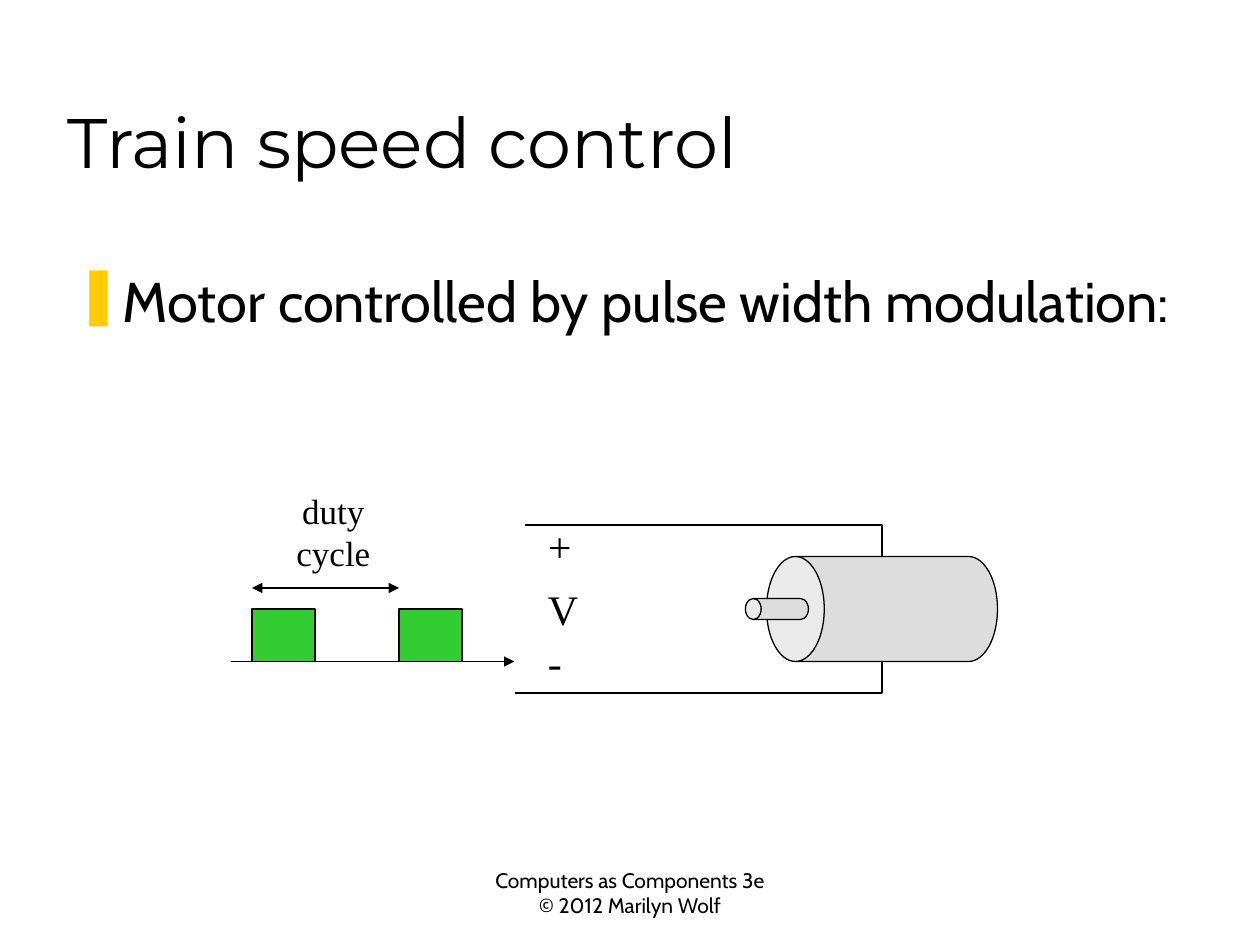
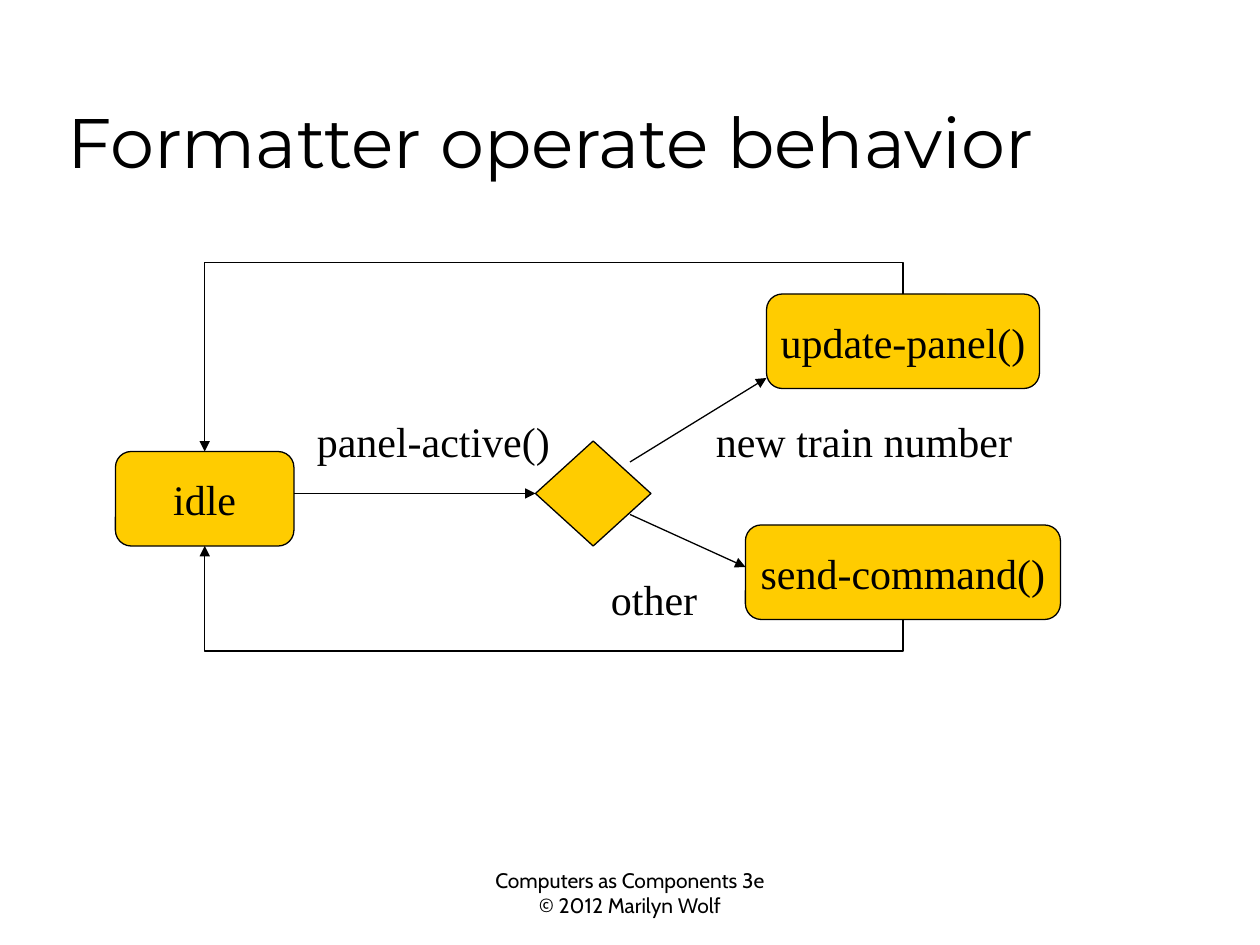
from lxml import etree
from pptx import Presentation
from pptx import util as u
from pptx.dml.color import RGBColor
from pptx.enum import shapes, text
from pptx.oxml import ns

PX = 9525  # EMU per px, 96 px to the inch

BLACK = RGBColor(0x00, 0x00, 0x00)
YELLOW = RGBColor(0xFF, 0xCC, 0x00)
GREEN = RGBColor(0x33, 0xCC, 0x33)
GREY = RGBColor(0xDD, 0xDD, 0xDD)

TITLE_FONT = "Montserrat"
BODY_FONT = "Cabin"
DIAGRAM_FONT = "Times New Roman"

SHAPE = shapes.MSO_SHAPE
LEFT, CENTER = text.PP_ALIGN.LEFT, text.PP_ALIGN.CENTER


def emu(*lengths):
    return [u.Emu(length * PX) for length in lengths]


def add_element(parent, tag, **attributes):
    return etree.SubElement(parent, ns.qn(tag), attributes)


class Page:
    """The shared style and the current slide."""

    def __init__(self, deck, title):
        self.slide = deck.slides.add_slide(deck.slide_layouts[6])
        self.shapes = self.slide.shapes
        self.textbox("Computers as Components 3e\n© 2012 Marilyn Wolf",
                     352, 656, 256, 48, 12, BODY_FONT, CENTER)
        heading = self.textbox(title, 42, 24, 816, 120, 40, TITLE_FONT)
        heading.text_frame.vertical_anchor = text.MSO_ANCHOR.BOTTOM

    def set_words(self, box, words, size, font, align):
        box.text_frame.text = words
        for para in box.text_frame.paragraphs:
            para.alignment = align
            for span in para.runs:
                span.font.size = u.Pt(size)
                span.font.name = font
                span.font.color.rgb = BLACK

    def textbox(self, words, x, y, width, height, size, font, align=LEFT):
        box = self.shapes.add_textbox(*emu(x, y, width, height))
        box.text_frame.word_wrap = True
        self.set_words(box, words, size, font, align)
        return box

    def label(self, words, x, y, width, height=48, size=24, align=LEFT):
        box = self.textbox(words, x, y, width, height, size, DIAGRAM_FONT, align)
        box.text_frame.word_wrap = False
        box.text_frame.auto_size = text.MSO_AUTO_SIZE.SHAPE_TO_FIT_TEXT

    def bullet(self, words, x, y, width, height):
        box = self.textbox(words, x, y, width, height, 32, BODY_FONT)
        props = box.text_frame.paragraphs[0]._p.get_or_add_pPr()
        props.set("marL", str(36 * PX))
        props.set("indent", str(-36 * PX))
        add_element(add_element(props, "a:buClr"), "a:srgbClr", val=str(YELLOW))
        add_element(props, "a:buChar", char="❚")

    def outline(self, line):
        line.color.rgb = BLACK
        line.width = u.Pt(0.75)

    def shape(self, kind, x, y, width, height, fill, words=""):
        box = self.shapes.add_shape(kind, *emu(x, y, width, height))
        box.shadow.inherit = False
        box.fill.solid()
        box.fill.fore_color.rgb = fill
        self.outline(box.line)
        if words:
            box.text_frame.word_wrap = False
            box.text_frame.vertical_anchor = text.MSO_ANCHOR.MIDDLE
            self.set_words(box, words, 24, DIAGRAM_FONT, CENTER)
        return box

    def cylinder(self, x, y, width, height, rim):
        """A can lying on its side, its open end to the left."""
        can = self.shape(SHAPE.CAN, x + (width - height) // 2,
                         y + (height - width) // 2, height, width, GREY)
        can.adjustments[0] = rim
        can.rotation = 270

    def line(self, start, end, head=False, tail=False, kind="STRAIGHT"):
        connector = self.shapes.add_connector(
            shapes.MSO_CONNECTOR[kind], *emu(*start, *end))
        self.outline(connector.line)
        ends = connector._element.spPr.find(ns.qn("a:ln"))
        if head:
            add_element(ends, "a:headEnd", type="triangle")
        if tail:
            add_element(ends, "a:tailEnd", type="triangle")
        add_element(connector._element.spPr, "a:effectLst")
        return connector

    def elbow(self, start, end, level=None, tail=False):
        """Leave start vertically; with a level, run along it and turn to end."""
        (x1, y1), (x2, y2) = start, end
        connector = self.line(start, end, tail=tail, kind="ELBOW")
        width, height = abs(y2 - y1), abs(x2 - x1)
        connector.left, connector.top, connector.width, connector.height = emu(
            (x1 + x2 - width) // 2, (y1 + y2 - height) // 2, width, height)
        crossing = level is not None
        frame = connector._element.spPr.xfrm
        frame.set("rot", str((270 if crossing else 90) * 60000))
        frame.set("flipH", str(int((y2 < y1) != crossing)))
        frame.set("flipV", str(int(crossing)))
        geometry = connector._element.spPr.find(ns.qn("a:prstGeom"))
        if crossing:
            share = round((level - y1) / (y2 - y1) * 100000)
            add_element(geometry.find(ns.qn("a:avLst")), "a:gd",
                        name="adj1", fmla=f"val {share}")
        else:
            geometry.set("prst", "bentConnector2")


def train_speed(deck):
    page = Page(deck, "Train speed control")
    page.bullet("Motor controlled by pulse width modulation:", 48, 198, 858, 130)

    # Motor, shaft and supply wires
    page.cylinder(584, 424, 176, 80, 0.55)
    page.cylinder(568, 456, 48, 16, 0.75)
    page.elbow((672, 424), (400, 400))
    page.elbow((672, 504), (392, 528))
    for sign, y, width in (("V", 440, 42), ("+", 392, 37), ("-", 480, 30)):
        page.label(sign, 408, y, width)

    # Pulse train
    pulses = (192, 304)
    page.line((176, 504), (392, 504), tail=True)
    for x in pulses:
        page.shape(SHAPE.RECTANGLE, x, 464, 48, 40, GREEN)
    page.line((pulses[0], 448), (pulses[1], 448), head=True, tail=True)
    page.label("duty\ncycle", 216, 368, 76, 74, 20, CENTER)


def formatter_operate(deck):
    page = Page(deck, "Formatter operate behavior")

    # States and decision
    for name, x, y, width in (("idle", 88, 344, 136),
                              ("update-panel()", 584, 224, 208),
                              ("send-command()", 568, 400, 240)):
        page.shape(SHAPE.ROUNDED_RECTANGLE, x, y, width, 72, YELLOW, name)
    decision = page.shape(SHAPE.DIAMOND, 408, 336, 88, 80, YELLOW)

    # Transition labels
    for words, x, y, width in (("panel-active()", 232, 312, 197),
                               ("new train number", 536, 312, 245),
                               ("other", 456, 432, 85)):
        page.label(words, x, y, width)

    # Transitions and returns to idle
    page.line((224, 376), (408, 376), tail=True).end_connect(decision, 1)
    page.line((480, 352), (584, 288), tail=True)
    page.line((480, 392), (568, 432), tail=True)
    page.elbow((688, 472), (156, 416), level=496, tail=True)
    page.elbow((688, 224), (156, 344), level=200, tail=True)


def main():
    deck = Presentation()
    deck.slide_width, deck.slide_height = emu(960, 720)
    train_speed(deck)
    formatter_operate(deck)
    deck.save("out.pptx")


if __name__ == "__main__":
    main()
